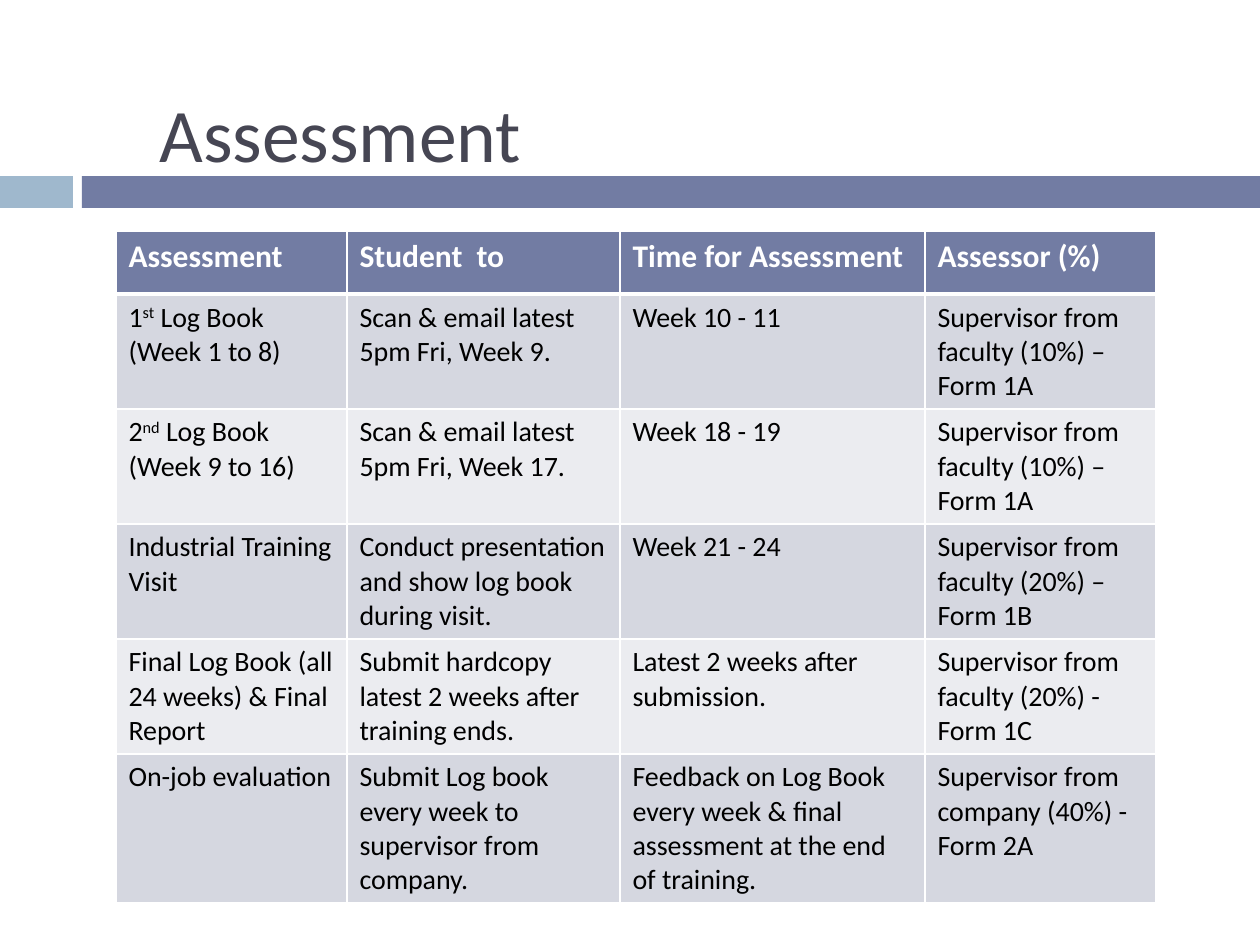
from lxml.etree import SubElement
from pptx import Presentation
from pptx.dml.color import RGBColor
from pptx.enum.shapes import MSO_SHAPE
from pptx.enum.text import MSO_ANCHOR
from pptx.oxml.ns import qn
from pptx.util import Emu, Pt

WHITE = RGBColor(0xFF, 0xFF, 0xFF)
BLACK = RGBColor(0, 0, 0)
INK = RGBColor(0x46, 0x46, 0x53)
SKY = RGBColor(0x9F, 0xB8, 0xCD)
SLATE = RGBColor(0x72, 0x7C, 0xA3)
DARK = RGBColor(0xD5, 0xD7, 0xE0)
LIGHT = RGBColor(0xEB, 0xEC, 0xF0)

SCALE = 914400 / 126
COLS = [231, 273, 305, 231]
ROWS = [63, 115, 115, 115, 115, 149]
DATA = [
    ["Assessment", "Student  to", "Time for Assessment", "Assessor (%)"],
    [("1", "st", " Log Book (Week 1 to 8)"),
     "Scan & email latest 5pm Fri, Week 9.",
     "Week 10 - 11",
     "Supervisor from faculty (10%) – Form 1A"],
    [("2", "nd", " Log Book (Week 9 to 16)"),
     "Scan & email latest 5pm Fri, Week 17.",
     "Week 18 - 19",
     "Supervisor from faculty (10%) – Form 1A"],
    ["Industrial Training Visit",
     "Conduct presentation and show log book during visit.",
     "Week 21 - 24",
     "Supervisor from faculty (20%) – Form 1B"],
    ["Final Log Book (all 24 weeks) & Final Report",
     "Submit hardcopy latest 2 weeks after training ends.",
     "Latest 2 weeks after submission.",
     "Supervisor from faculty (20%) - Form 1C"],
    ["On-job evaluation",
     "Submit Log book every week to supervisor from company.",
     "Feedback on Log Book every week & final assessment at the end of training.",
     "Supervisor from company (40%) - Form 2A"],
]


def px(*nums):
    return [Emu(round(n * SCALE)) for n in nums]


def write(para, text, size, color, bold=False):
    run = para.add_run()
    run.text = text
    run.font.name = "Calibri"
    run.font.size = Pt(size)
    run.font.bold = bold
    run.font.color.rgb = color
    return run


deck = Presentation()
deck.slide_width, deck.slide_height = px(1260, 945)
slide = deck.slides.add_slide(deck.slide_layouts[6])

for left, width, color in [(0, 73, SKY), (82, 1178, SLATE)]:
    bar = slide.shapes.add_shape(MSO_SHAPE.RECTANGLE, *px(left, 176, width, 32))
    bar.shadow.inherit = False
    bar.fill.solid()
    bar.fill.fore_color.rgb = color
    bar.line.fill.background()

title = slide.shapes.add_textbox(*px(147, 84, 960, 97)).text_frame
title.word_wrap = True
title.vertical_anchor = MSO_ANCHOR.MIDDLE
write(title.paragraphs[0], "Assessment", 43.2, INK)

table = slide.shapes.add_table(
    len(ROWS), len(COLS), *px(116, 231, sum(COLS), sum(ROWS))).table
for col, width in zip(table.columns, px(*COLS)):
    col.width = width
for row, height in zip(table.rows, px(*ROWS)):
    row.height = height

for i, line in enumerate(DATA):
    head = i == 0
    for j, text in enumerate(line):
        cell = table.cell(i, j)
        props = cell._tc.get_or_add_tcPr()
        for side in ("lnL", "lnR", "lnT", "lnB"):
            thick = (head and side == "lnB") or (i == 1 and side == "lnT")
            edge = SubElement(props, qn("a:" + side), w=str(Pt(3 if thick else 1)))
            paint = SubElement(edge, qn("a:solidFill"))
            SubElement(paint, qn("a:srgbClr"), val=str(WHITE))
        cell.fill.solid()
        cell.fill.fore_color.rgb = SLATE if head else DARK if i % 2 else LIGHT
        parts = (text,) if isinstance(text, str) else text
        for k, part in enumerate(parts):
            run = write(cell.text_frame.paragraphs[0], part,
                        18 if head else 16, WHITE if head else BLACK, head)
            if k == 1:
                run.font._element.set("baseline", "30000")

deck.save("out.pptx")
